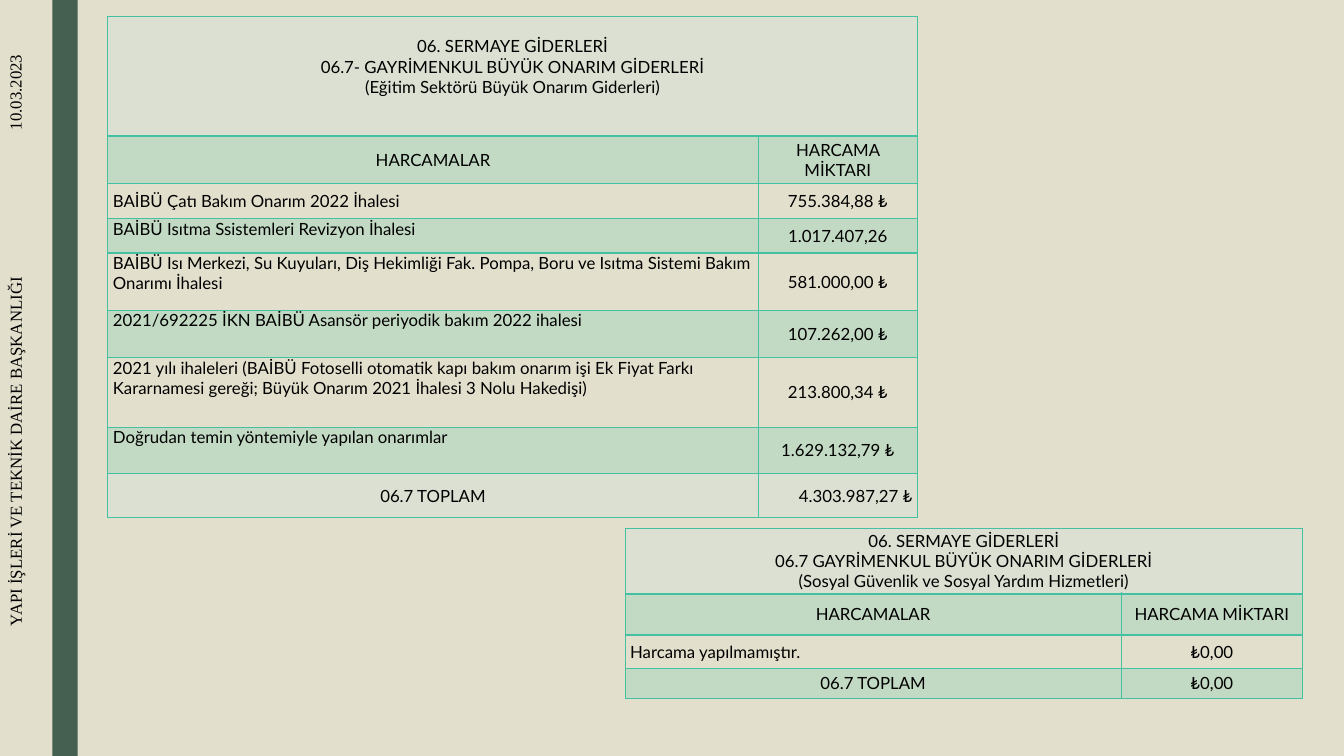
from dataclasses import dataclass

from lxml import etree
from pptx import Presentation
from pptx.dml.color import RGBColor
from pptx.enum.shapes import MSO_SHAPE
from pptx.enum.text import MSO_ANCHOR, PP_ALIGN
from pptx.oxml.ns import qn
from pptx.util import Inches, Pt

RECTANGLE = MSO_SHAPE.RECTANGLE
TOP, MIDDLE = MSO_ANCHOR.TOP, MSO_ANCHOR.MIDDLE
LEFT, CENTER, RIGHT = PP_ALIGN.LEFT, PP_ALIGN.CENTER, PP_ALIGN.RIGHT


@dataclass(frozen=True)
class Theme:
    """Colours, fonts and sizes of the slide."""
    background: str = "E2DFCC"
    stripe: str = "455F51"
    accent: str = "44C1A3"
    panel: str = "DBE0D2"
    ink: str = "000000"
    table_font: str = "Lato"
    side_font: str = "Times New Roman"
    size: int = 12
    band_alpha: int = 20
    border: int = 1
    heading_border: int = 2


THEME = Theme()

COLUMN_HEADS = ("HARCAMALAR", "HARCAMA MİKTARI")

EDUCATION_HEADING = ("06. SERMAYE GİDERLERİ\n"
                     "06.7- GAYRİMENKUL BÜYÜK ONARIM GİDERLERİ\n"
                     "(Eğitim Sektörü Büyük Onarım Giderleri)")
EDUCATION_ROWS = [
    (0.47, *COLUMN_HEADS, CENTER, MIDDLE, CENTER),
    (0.35, "BAİBÜ Çatı Bakım Onarım 2022 İhalesi", "755.384,88 ₺", LEFT, MIDDLE, CENTER),
    (0.34, "BAİBÜ Isıtma Ssistemleri Revizyon İhalesi", "1.017.407,26", LEFT, TOP, CENTER),
    (0.57, "BAİBÜ Isı Merkezi, Su Kuyuları, Diş Hekimliği Fak. Pompa, Boru ve "
           "Isıtma Sistemi Bakım Onarımı İhalesi", "581.000,00 ₺", LEFT, TOP, CENTER),
    (0.47, "2021/692225 İKN BAİBÜ Asansör periyodik bakım 2022 ihalesi",
     "107.262,00 ₺", LEFT, TOP, CENTER),
    (0.69, "2021 yılı ihaleleri (BAİBÜ Fotoselli otomatik kapı bakım onarım işi Ek "
           "Fiyat Farkı Kararnamesi gereği; Büyük Onarım 2021 İhalesi 3 Nolu Hakedişi)",
     "213.800,34 ₺", LEFT, TOP, CENTER),
    (0.46, "Doğrudan temin yöntemiyle yapılan onarımlar", "1.629.132,79 ₺", LEFT, TOP, CENTER),
    (0.44, "06.7 TOPLAM", "4.303.987,27 ₺", CENTER, MIDDLE, RIGHT),
]

WELFARE_HEADING = ("06. SERMAYE GİDERLERİ\n"
                   "06.7 GAYRİMENKUL BÜYÜK ONARIM GİDERLERİ\n"
                   "(Sosyal Güvenlik ve Sosyal Yardım Hizmetleri)")
WELFARE_ROWS = [
    (0.41, *COLUMN_HEADS, CENTER, MIDDLE, CENTER),
    (0.33, "Harcama yapılmamıştır.", "₺0,00", LEFT, MIDDLE, CENTER),
    (0.30, "06.7 TOPLAM", "₺0,00", CENTER, MIDDLE, CENTER),
]


def write_text(frame, text, font_name, alignment):
    """Put text in a frame with the theme's size and ink."""
    frame.text = text
    for paragraph in frame.paragraphs:
        paragraph.alignment = alignment
        for run in paragraph.runs:
            for name, value in {"name": font_name, "size": Pt(THEME.size)}.items():
                setattr(run.font, name, value)
            run.font.color.rgb = RGBColor.from_string(THEME.ink)


def fill_cell(cell, color, alpha=100):
    """Fill a cell, or clear it when no colour is given."""
    if color is None:
        cell.fill.background()
        return
    cell.fill.solid()
    cell.fill.fore_color.rgb = RGBColor.from_string(color)
    if alpha < 100:
        tint = cell._tc.tcPr.find(qn("a:solidFill")).find(qn("a:srgbClr"))
        etree.SubElement(tint, qn("a:alpha"), val=str(alpha * 1000))


def border_cell(cell, top, bottom):
    """Draw the four borders of a cell ahead of its fill."""
    properties = cell._tc.get_or_add_tcPr()
    widths = {"a:lnL": THEME.border, "a:lnR": THEME.border, "a:lnT": top, "a:lnB": bottom}
    for position, (tag, width) in enumerate(widths.items()):
        line = etree.Element(qn(tag), w=str(Pt(width)))
        paint = etree.SubElement(line, qn("a:solidFill"))
        etree.SubElement(paint, qn("a:srgbClr"), val=THEME.accent)
        properties.insert(position, line)


def format_cell(cell, text, alignment, anchor, margin_top=0):
    """Write a table cell with its insets and anchor."""
    layout = {"margin_left": Inches(0.05), "margin_right": Inches(0.05),
              "margin_top": Inches(margin_top), "margin_bottom": 0,
              "vertical_anchor": anchor}
    for name, value in layout.items():
        setattr(cell, name, value)
    write_text(cell.text_frame, text, THEME.table_font, alignment)


def row_fill(row, last_row):
    """Choose colour and opacity: odd rows banded, heading and even total on panel."""
    if row % 2:
        return THEME.accent, THEME.band_alpha
    return (THEME.panel if row in (0, last_row) else None), 100


def add_expense_table(slide, left, top, columns, heading, heading_height, rows,
                      heading_anchor, heading_margin=0):
    """Build an expense table with a merged heading over its rows."""
    heights = [heading_height] + [row[0] for row in rows]
    table = slide.shapes.add_table(
        len(heights), len(columns), Inches(left), Inches(top),
        Inches(sum(columns)), Inches(sum(heights))).table
    table.first_row = table.horz_banding = False
    for column, width in zip(table.columns, columns):
        column.width = Inches(width)
    for index, height in enumerate(heights):
        table.rows[index].height = Inches(height)
        upper = THEME.heading_border if index == 1 else THEME.border
        lower = THEME.heading_border if index == 0 else THEME.border
        for cell in table.rows[index].cells:
            fill_cell(cell, *row_fill(index, len(rows)))
            border_cell(cell, upper, lower)
    table.cell(0, 0).merge(table.cell(0, 1))
    format_cell(table.cell(0, 0), heading, CENTER, heading_anchor, heading_margin)
    for index, (_, label, amount, label_align, label_anchor, amount_align) in enumerate(rows, 1):
        format_cell(table.cell(index, 0), label, label_align, label_anchor)
        format_cell(table.cell(index, 1), amount, amount_align, MIDDLE)


def add_side_text(slide, text, left, top, width, height):
    """Add a line of text that reads upwards."""
    box = slide.shapes.add_textbox(Inches(left), Inches(top), Inches(width), Inches(height))
    box.rotation = 270
    box.text_frame.word_wrap = True
    box.text_frame.vertical_anchor = TOP
    write_text(box.text_frame, text, THEME.side_font, LEFT)


def add_side_band(slide, left, width, height):
    """Add the dark stripe with the date and department beside it."""
    stripe = slide.shapes.add_shape(RECTANGLE, Inches(left), 0, Inches(width), Inches(height))
    stripe.shadow.inherit = False
    stripe.fill.solid()
    stripe.fill.fore_color.rgb = RGBColor.from_string(THEME.stripe)
    stripe.line.fill.background()
    add_side_text(slide, "10.03.2023", -0.55, 0.4, 1.54, 0.44)
    add_side_text(slide, "YAPI İŞLERİ VE TEKNİK DAİRE BAŞKANLIĞI", -2.2, 3.86, 4.65, 0.25)


def main():
    """Build the slide and save it."""
    deck = Presentation()
    deck.slide_width, deck.slide_height = Inches(13.33), Inches(7.5)
    slide = deck.slides.add_slide(deck.slide_layouts[6])
    slide.background.fill.solid()
    slide.background.fill.fore_color.rgb = RGBColor.from_string(THEME.background)
    add_side_band(slide, 0.52, 0.25, 7.5)
    add_expense_table(slide, 1.07, 0.16, (6.45, 1.58), EDUCATION_HEADING, 1.19,
                      EDUCATION_ROWS, TOP, 0.2)
    add_expense_table(slide, 6.2, 5.24, (4.92, 1.8), WELFARE_HEADING, 0.65,
                      WELFARE_ROWS, MIDDLE)
    deck.save("out.pptx")


if __name__ == "__main__":
    main()
